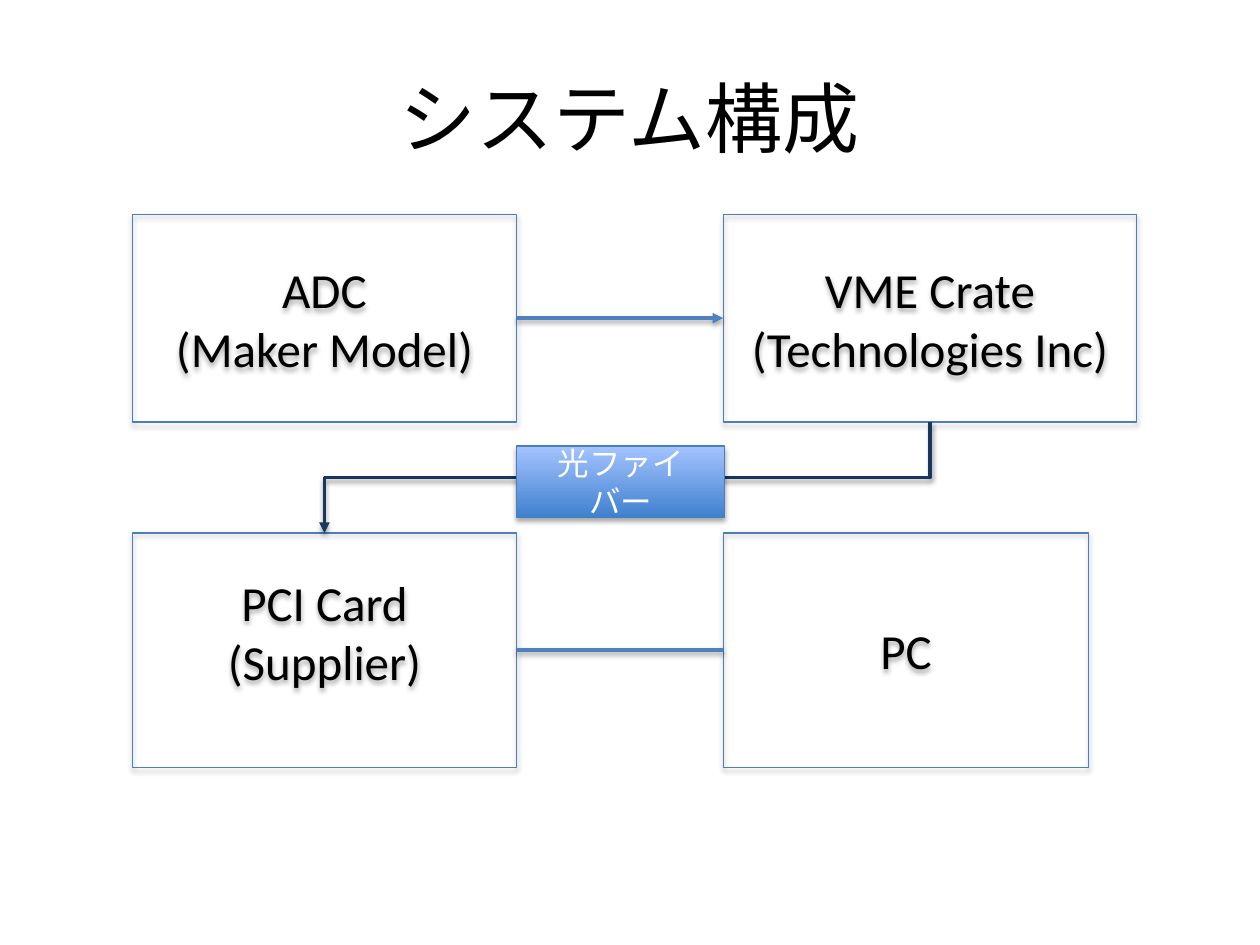
from lxml.etree import SubElement
from pptx import Presentation
from pptx.dml.color import RGBColor as RGB
from pptx.enum.shapes import MSO_CONNECTOR as CONN, MSO_SHAPE as SHAPE
from pptx.enum.text import MSO_ANCHOR as ANCHOR, PP_ALIGN as ALIGN
from pptx.oxml.ns import qn
from pptx.util import Inches, Pt

C = {"text": "000000", "white": "FFFFFF", "border": "4B7EBC", "link": "4F81BD",
     "fiber": "17375E", "dark": "3F80CE", "light": "A4C4FF"}

# Grid: left edges of the two columns, tops and heights of the two rows
LEFT, RIGHT, BOX_W = 1.05, 5.74, 3.05
TOP, TOP_H = 1.7, 1.65
LOW, LOW_H = 4.23, 1.86


def write(s, lines, size, color):
    """Centre lines of text in a shape."""
    tf = s.text_frame
    tf.word_wrap = True
    tf.vertical_anchor = ANCHOR.MIDDLE
    tf.text = "\n".join(lines)
    for p in tf.paragraphs:
        p.alignment = ALIGN.CENTER
        p.font.size = Pt(size)
        p.font.name = "Calibri"
        p.font.color.rgb = RGB.from_string(C[color])


def style(s, color, width, dist, alpha, arrow=False):
    """Set the outline, the optional arrowhead and the soft shadow below."""
    s.line.color.rgb = RGB.from_string(C[color])
    s.line.width = Pt(width)
    spPr = s._element.spPr
    if arrow:
        SubElement(spPr.find(qn("a:ln")), qn("a:tailEnd"), type="triangle")
    effects = SubElement(spPr, qn("a:effectLst"))
    shadow = SubElement(effects, qn("a:outerShdw"), blurRad=str(Pt(3.1)),
                        dist=str(Pt(dist)), dir="5400000", rotWithShape="0")
    black = SubElement(shadow, qn("a:srgbClr"), val="000000")
    SubElement(black, qn("a:alpha"), val=str(alpha * 1000))


prs = Presentation()
prs.slide_width, prs.slide_height = Inches(10), Inches(7.5)
slide = prs.slides.add_slide(prs.slide_layouts[6])
shapes = slide.shapes

title = shapes.add_textbox(Inches(0.5), Inches(0.3), Inches(9), Inches(1.25))
write(title, ["システム構成"], 44, "text")

boxes = {}
for name, lines, x, y, w, h in [
    ("adc", ["ADC", "(Maker Model)"], LEFT, TOP, BOX_W, TOP_H),
    ("crate", ["VME Crate", "(Technologies Inc)"], RIGHT, TOP, 3.28, TOP_H),
    ("card", ["PCI Card", "(Supplier)"], LEFT, LOW, BOX_W, LOW_H),
    ("pc", ["PC"], RIGHT, LOW, 2.9, LOW_H),
]:
    s = shapes.add_shape(SHAPE.RECTANGLE, Inches(x), Inches(y), Inches(w), Inches(h))
    s.fill.background()
    style(s, "border", 0.75, 1.8, 35)
    write(s, lines, 28, "text")
    boxes[name] = s
boxes["card"].text_frame.margin_bottom = Inches(0.35)

for start, end, arrow in [("adc", "crate", True), ("card", "pc", False)]:
    link = shapes.add_connector(CONN.STRAIGHT, 0, 0, 0, 0)
    link.begin_connect(boxes[start], 3)
    link.end_connect(boxes[end], 1)
    style(link, "link", 2, 1.6, 38, arrow)

# The fiber runs down, left and down: an elbow turned a quarter about its centre
crate, card = boxes["crate"], boxes["card"]
x1, y1 = crate.left + crate.width // 2, crate.top + crate.height
x2, y2 = card.left + card.width // 2, card.top
cx, cy = (x1 + x2) // 2, (y1 + y2) // 2
half_w, half_h = (y2 - y1) // 2, (x1 - x2) // 2
fiber = shapes.add_connector(CONN.ELBOW, cx - half_w, cy - half_h,
                             cx + half_w, cy + half_h)
fiber._element.spPr.find(qn("a:xfrm")).set("rot", "5400000")
style(fiber, "fiber", 2, 1.6, 38, True)

label = shapes.add_shape(SHAPE.RECTANGLE, Inches(LEFT + BOX_W), Inches(3.54),
                         Inches(1.65), Inches(0.57))
label.fill.gradient()
label.fill.gradient_angle = 90
for stop, color, position in zip(label.fill.gradient_stops, ("dark", "light"), (0, 1)):
    stop.color.rgb = RGB.from_string(C[color])
    stop.position = position
style(label, "border", 0.75, 1.8, 35)
write(label, ["光ファイバー"], 18, "white")

prs.save("out.pptx")
